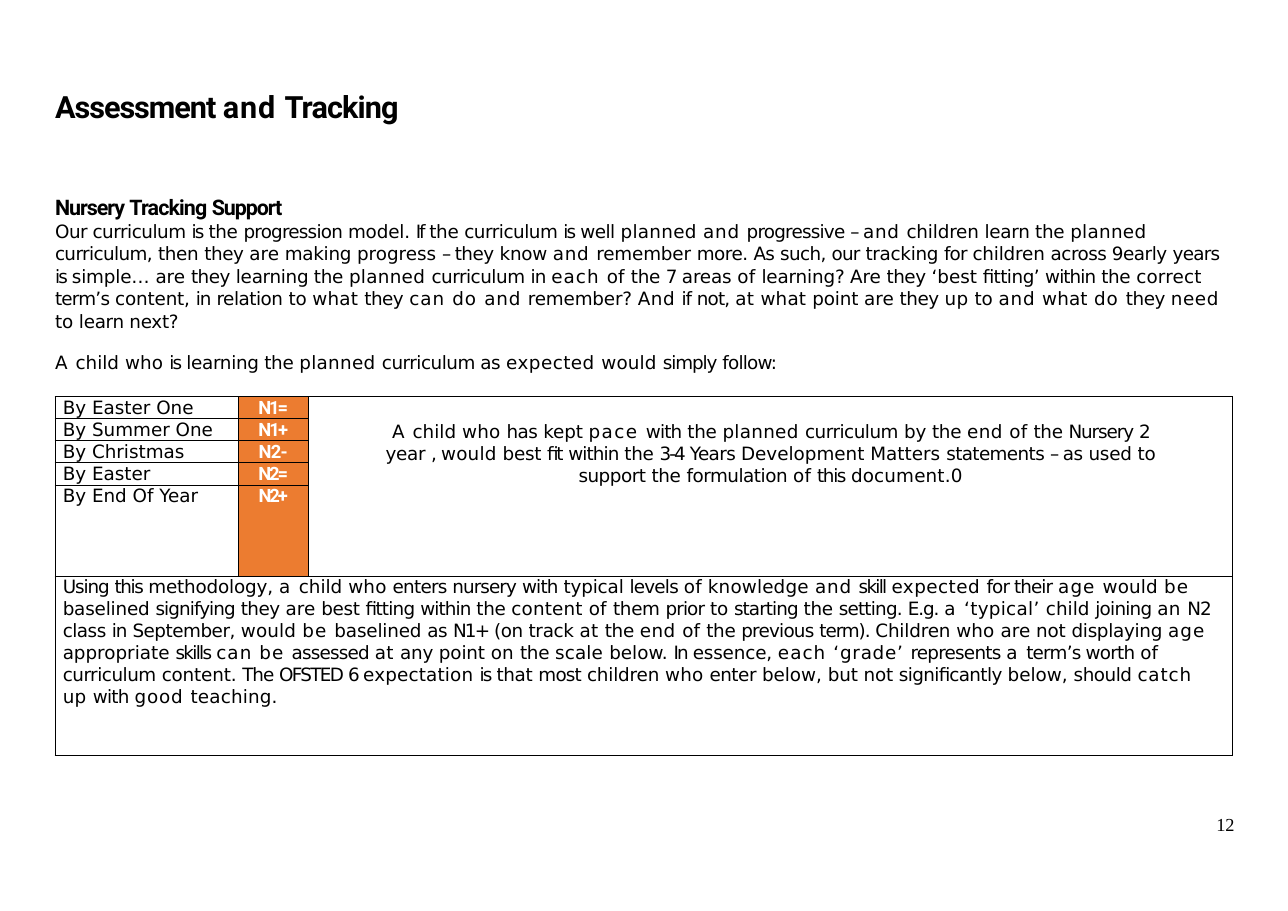
from dataclasses import dataclass
from itertools import groupby

from lxml.etree import SubElement
from pptx import Presentation
from pptx.dml.color import RGBColor
from pptx.enum.text import MSO_AUTO_SIZE as AutoSize, PP_ALIGN as Align
from pptx.oxml.ns import qn
from pptx.util import Inches, Pt


@dataclass(frozen=True)
class TextStyle:
    font: str
    size: float
    color: RGBColor
    bold: bool = False


@dataclass(frozen=True)
class Theme:
    black = RGBColor(0x00, 0x00, 0x00)
    orange = RGBColor(0xEC, 0x7C, 0x30)
    title = TextStyle("Roboto", 20, black, True)
    heading = TextStyle("Roboto", 14, black, True)
    body = TextStyle("DejaVu Sans", 12, black)
    grade = TextStyle("Roboto", 12, RGBColor(0xFF, 0xFF, 0xFF), True)
    page_number = TextStyle("Times New Roman", 12, black)
    border_width = 0.5


@dataclass(frozen=True)
class TextBlock:
    text: str
    style: TextStyle
    line_spacing: float | Pt = 1.0
    space_before: float = 0.0
    align: Align = Align.LEFT


@dataclass(frozen=True)
class TextArea:
    left: float
    top: float
    width: float
    height: float
    blocks: tuple[TextBlock, ...]


@dataclass(frozen=True)
class Milestone:
    label: str
    grade: str


THEME = Theme()
PROSE_SPACING = 1.02
ROW_LINE = Pt(13.7)

# Letter spacing in points, and the words set with it; all others use none.
WORDS_BY_TRACKING = {
    -1.6: "– 6",
    -1.4: "If N1= N2= N2+",
    -1.2: "is In 3-4 N1+",
    -1.1: "skill skills OFSTED ,",
    -1.0: "7 2",
    -0.9: "this",
    -0.7: "Assessment Nursery Support simply if Using fit E.g. term). The",
    -0.6: "Tracking for in within their signifying prior starting N2 nursery",
    -0.5: "progression progressive As our years term’s not, follow: with enters "
          "levels fitting setting. joining previous assessed represents worth "
          "most N2-",
    -0.4: "curriculum, such, Years statements significantly",
    -0.3: "Our curriculum well they more. across 9early fitting’ relation as "
          "has support formulation class September, (on enter should",
    -0.2: "the learn then making know tracking learning best year them track "
          "displaying that next?",
    -0.1: "model. children remember more areas learning? Are content, to "
          "remember? point kept by used methodology, typical baselined "
          "Children not any essence, content. but simple…",
    0.1: "correct what of who would document.0 knowledge content on scale "
         "expectation teaching.",
    0.2: "planned at up ‘typical’",
    0.3: "And expected end an",
    0.4: "need",
    0.5: "and ‘grade’",
    0.6: "good catch",
    0.7: "each can do A age be",
    0.9: "pace a",
}
TRACKING = {word: points for points, words in WORDS_BY_TRACKING.items()
            for word in words.split()}

TEXT_AREAS = (
    TextArea(0.49, 0.79, 3.42, 0.36, (
        TextBlock("Assessment and Tracking", THEME.title, space_before=1),
    )),
    TextArea(0.49, 1.75, 10.64, 1.66, (
        TextBlock("Nursery Tracking Support", THEME.heading, space_before=1.1),
        TextBlock(
            "Our curriculum is the progression model. If the curriculum is well "
            "planned and progressive – and children learn the planned curriculum, "
            "then they are making progress – they know and remember more. As such, "
            "our tracking for children across 9early years is simple… are they "
            "learning the planned curriculum in each of the 7 areas of learning? "
            "Are they ‘best fitting’ within the correct term’s content, in relation "
            "to what they can do and remember? And if not, at what point are they "
            "up to and what do they need to learn next?",
            THEME.body, PROSE_SPACING, 0.1),
        TextBlock("A child who is learning the planned curriculum as expected "
                  "would simply follow:", THEME.body, space_before=12.5),
    )),
    TextArea(11.03, 7.38, 0.22, 0.21, (
        TextBlock("12", THEME.page_number, Pt(14.1)),
    )),
)

MILESTONES = (
    Milestone("By Easter One", "N1="),
    Milestone("By Summer One", "N1+"),
    Milestone("By Christmas", "N2-"),
    Milestone("By Easter", "N2="),
    Milestone("By End Of Year", "N2+"),
)
EXPECTATION = TextBlock(
    "A child who has kept pace with the planned curriculum by the end of the "
    "Nursery 2 year , would best fit within the 3-4 Years Development Matters "
    "statements – as used to support the formulation of this document.0",
    THEME.body, PROSE_SPACING, align=Align.CENTER)
METHODOLOGY = TextBlock(
    "Using this methodology, a child who enters nursery with typical levels of "
    "knowledge and skill expected for their age would be baselined signifying "
    "they are best fitting within the content of them prior to starting the "
    "setting. E.g. a ‘typical’ child joining an N2 class in September, would be "
    "baselined as N1+ (on track at the end of the previous term). Children who "
    "are not displaying age appropriate skills can be assessed at any point on "
    "the scale below. In essence, each ‘grade’ represents a term’s worth of "
    "curriculum content. The OFSTED 6 expectation is that most children who "
    "enter below, but not significantly below, should catch up with good "
    "teaching.",
    THEME.body, PROSE_SPACING, 0.2)

COLUMN_WIDTHS = (1.66, 0.64, 8.39)
ROW_HEIGHTS = (0.17,) * len(MILESTONES) + (1.62,)


def write_block(paragraph, block: TextBlock) -> None:
    """Add one run for each stretch of words that share a letter spacing."""
    paragraph.alignment = block.align
    paragraph.line_spacing = block.line_spacing
    paragraph.space_before = Pt(block.space_before)
    stretches = groupby(block.text.split(), lambda word: TRACKING.get(word, 0))
    for index, (tracking, words) in enumerate(stretches):
        if index:
            run.text += " "
        run = paragraph.add_run()
        run.text = " ".join(words)
        font, style = run.font, block.style
        font.name, font.size, font.bold = style.font, Pt(style.size), style.bold
        font.color.rgb = style.color
        run._r.get_or_add_rPr().set("spc", str(round(tracking * 100)))


def set_margins(target, left: float, top: float, right: float) -> None:
    target.margin_left, target.margin_top = Inches(left), Inches(top)
    target.margin_right, target.margin_bottom = Inches(right), 0


def add_text_area(slide, area: TextArea) -> None:
    box = slide.shapes.add_textbox(Inches(area.left), Inches(area.top),
                                   Inches(area.width), Inches(area.height))
    frame = box.text_frame
    frame.word_wrap = True
    frame.auto_size = AutoSize.SHAPE_TO_FIT_TEXT
    set_margins(frame, 0.01, 0.01, 0)
    for index, block in enumerate(area.blocks):
        write_block(frame.add_paragraph() if index else frame.paragraphs[0], block)


def outline_cell(cell) -> None:
    properties = cell._tc.get_or_add_tcPr()
    for position, side in enumerate(("a:lnL", "a:lnR", "a:lnT", "a:lnB")):
        line = SubElement(properties, qn(side), w=str(Pt(THEME.border_width)))
        fill = SubElement(line, qn("a:solidFill"))
        SubElement(fill, qn("a:srgbClr"), val=str(THEME.black))
        properties.insert(position, line)


def fill_cell(cell, block: TextBlock, left: float = 0, top: float = 0.01,
              right: float = 0) -> None:
    set_margins(cell, left, top, right)
    write_block(cell.text_frame.paragraphs[0], block)


def add_tracking_table(slide) -> None:
    table = slide.shapes.add_table(
        len(ROW_HEIGHTS), len(COLUMN_WIDTHS), Inches(0.5), Inches(3.6),
        Inches(sum(COLUMN_WIDTHS)), Inches(sum(ROW_HEIGHTS))).table
    table.first_row = table.horz_banding = False
    for column, width in zip(table.columns, COLUMN_WIDTHS):
        column.width = Inches(width)
    for row, height in zip(table.rows, ROW_HEIGHTS):
        row.height = Inches(height)
    for cell in table.iter_cells():
        set_margins(cell, 0, 0, 0)
        cell.fill.background()
        outline_cell(cell)

    last = len(MILESTONES)
    table.cell(0, 2).merge(table.cell(last - 1, 2))
    table.cell(last, 0).merge(table.cell(last, 2))
    for row, milestone in enumerate(MILESTONES):
        fill_cell(table.cell(row, 0),
                  TextBlock(milestone.label, THEME.body, ROW_LINE, 0.5), left=0.07)
        grade_cell = table.cell(row, 1)
        grade_cell.fill.solid()
        grade_cell.fill.fore_color.rgb = THEME.orange
        fill_cell(grade_cell, TextBlock(milestone.grade, THEME.grade, ROW_LINE,
                                        0.5, Align.CENTER))
    fill_cell(table.cell(0, 2), EXPECTATION, 0.6, 0.22, 0.6)
    fill_cell(table.cell(last, 0), METHODOLOGY, 0.07, 0, 0.1)


def main() -> None:
    presentation = Presentation()
    presentation.slide_width, presentation.slide_height = Inches(11.69), Inches(8.27)
    slide = presentation.slides.add_slide(presentation.slide_layouts[6])
    for area in TEXT_AREAS:
        add_text_area(slide, area)
    add_tracking_table(slide)
    presentation.save("out.pptx")


if __name__ == "__main__":
    main()
